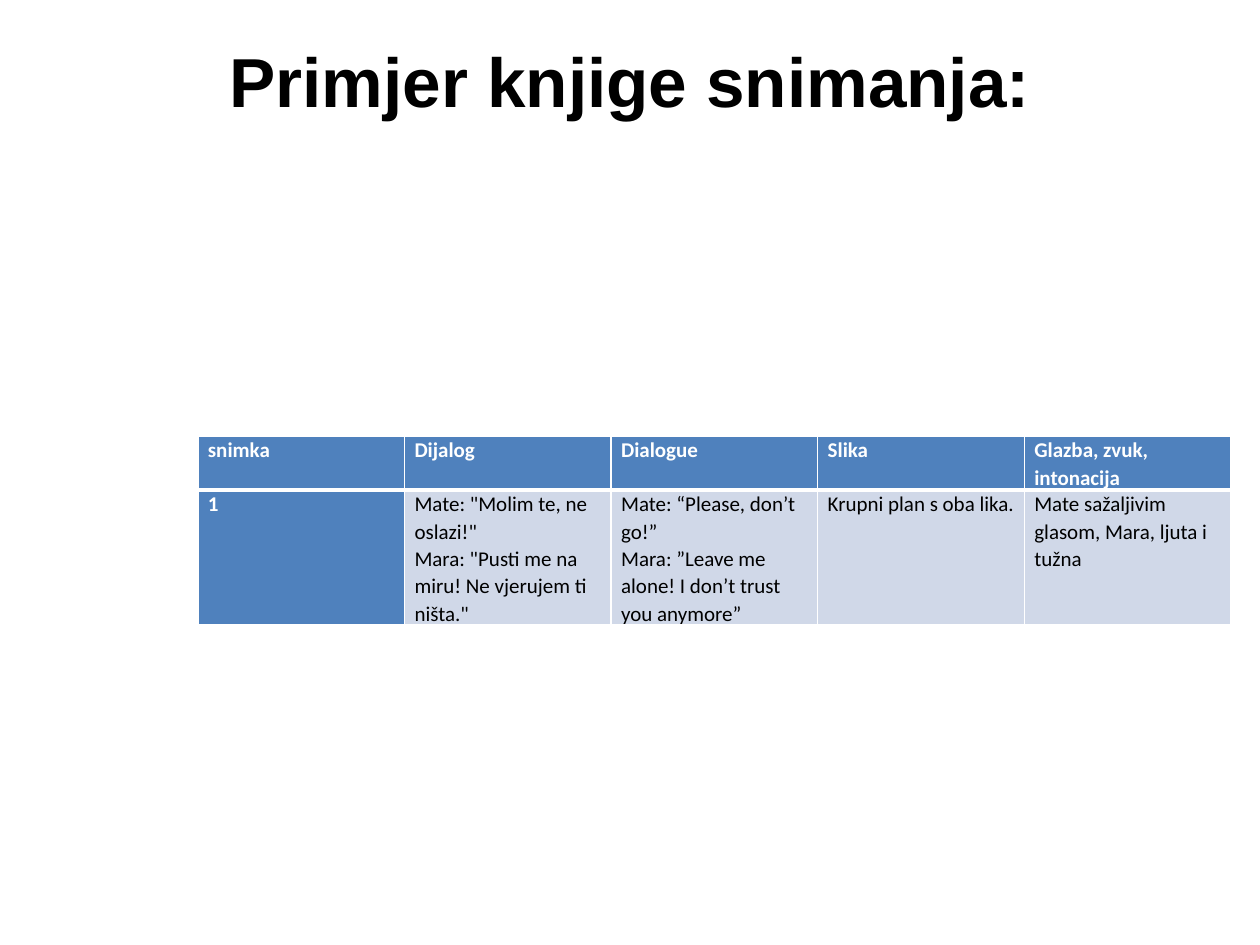
from pptx import Presentation
from pptx.dml.color import RGBColor as RGB
from pptx.enum.text import MSO_ANCHOR as Anchor, PP_ALIGN as Align
from pptx.oxml import parse_xml
from pptx.oxml.ns import nsdecls
from pptx.util import Inches, Pt

TITLE = "Primjer knjige snimanja:"
ROWS = [
    ["snimka", "Dijalog", "Dialogue", "Slika", "Glazba, zvuk, intonacija"],
    ["1",
     "Mate: \"Molim te, ne oslazi!\"\nMara: \"Pusti me na miru! Ne vjerujem ti ništa.\"",
     "Mate: “Please, don’t go!”\nMara: ”Leave me alone! I don’t trust you anymore”",
     "Krupni plan s oba lika.",
     "Mate sažaljivim glasom, Mara, ljuta i tužna"],
]
HEIGHTS = [0.43, 1.07]
LEFT, TOP, COL = 1.57, 3.46, 1.64

BLACK = RGB(0, 0, 0)
WHITE = RGB(255, 255, 255)
BLUE = RGB(0x4F, 0x81, 0xBD)
PALE = RGB(0xD0, 0xD8, 0xE8)

HEAD = dict(name="Arial", size=Pt(39.6), bold=True)
LABEL = dict(name="Calibri", size=Pt(12), bold=True)
BODY = dict(LABEL, bold=False)
CELL = dict(margin_left=Inches(0.08), margin_right=Inches(0.08),
            margin_top=0, margin_bottom=0, vertical_anchor=Anchor.TOP)
FRAME = dict(word_wrap=True, margin_top=0, margin_bottom=0,
             vertical_anchor=Anchor.TOP)


def apply(item, form):
    for key, val in form.items():
        setattr(item, key, val)


def style(par, form, color):
    apply(par.font, form)
    par.font.color.rgb = color


def edge(cell, side, width):
    """Draw one white cell border, width in points."""
    cell._tc.get_or_add_tcPr().append(parse_xml(
        f'<a:ln{side} {nsdecls("a")} w="{Pt(width)}"><a:solidFill>'
        f'<a:srgbClr val="{WHITE}"/></a:solidFill></a:ln{side}>'))


def add_title(slide):
    box = slide.shapes.add_textbox(*map(Inches, (0.5, 0.3, 9, 1.25)))
    frame = box.text_frame
    apply(frame, FRAME)
    frame.text = TITLE
    par = frame.paragraphs[0]
    par.alignment = Align.CENTER
    style(par, HEAD, BLACK)


def add_grid(slide):
    cols = len(ROWS[0])
    grid = slide.shapes.add_table(
        len(ROWS), cols, *map(Inches, (LEFT, TOP, COL * cols, sum(HEIGHTS)))).table
    for row, high in zip(grid.rows, HEIGHTS):
        row.height = Inches(high)
    for r, texts in enumerate(ROWS):
        for c, text in enumerate(texts):
            cell = grid.cell(r, c)
            label = r == 0 or c == 0
            apply(cell, CELL)
            thick = "B" if r == 0 else "T"
            for side in "LRTB":
                edge(cell, side, 3 if side == thick else 1)
            cell.fill.solid()
            cell.fill.fore_color.rgb = BLUE if label else PALE
            cell.text = text
            for par in cell.text_frame.paragraphs:
                par.line_spacing = 1.07
                style(par, LABEL if label else BODY, WHITE if label else BLACK)


def main():
    deck = Presentation()
    deck.slide_width, deck.slide_height = Inches(10), Inches(7.5)
    slide = deck.slides.add_slide(deck.slide_layouts[6])
    add_title(slide)
    add_grid(slide)
    deck.save("out.pptx")


if __name__ == "__main__":
    main()
